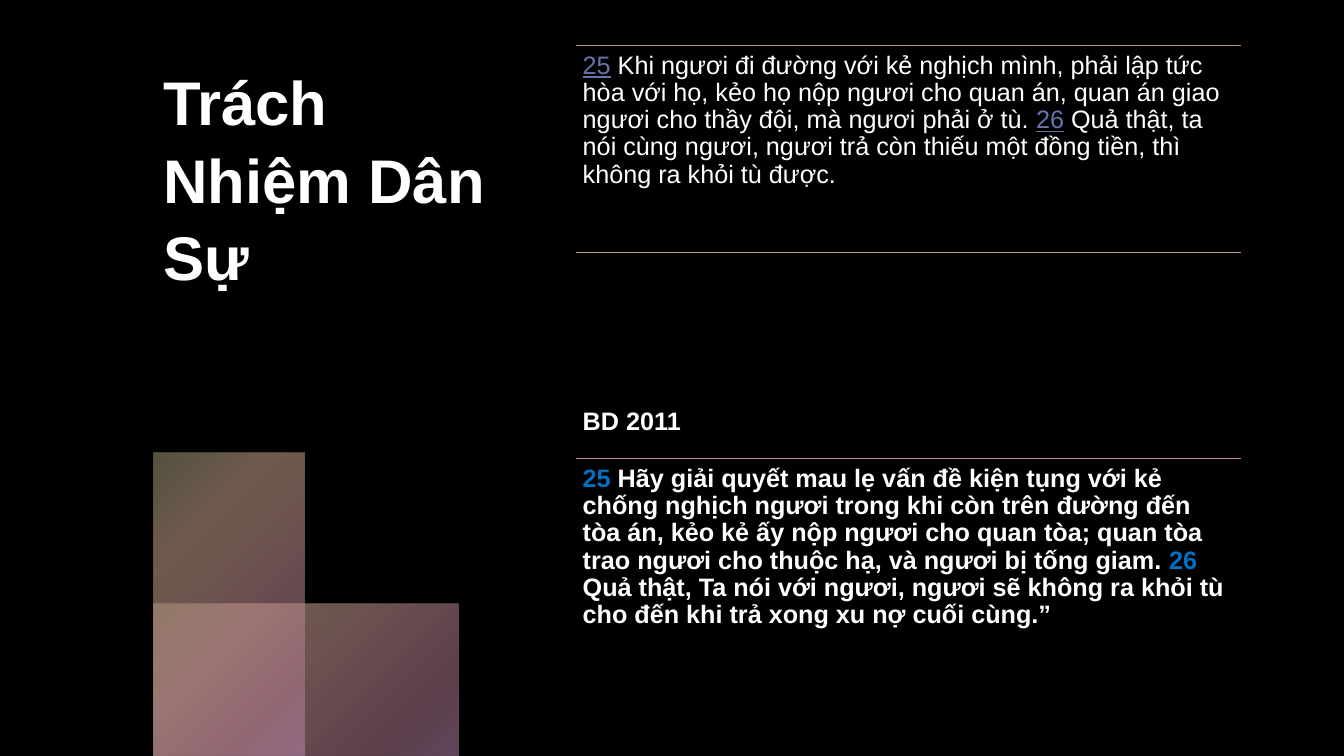
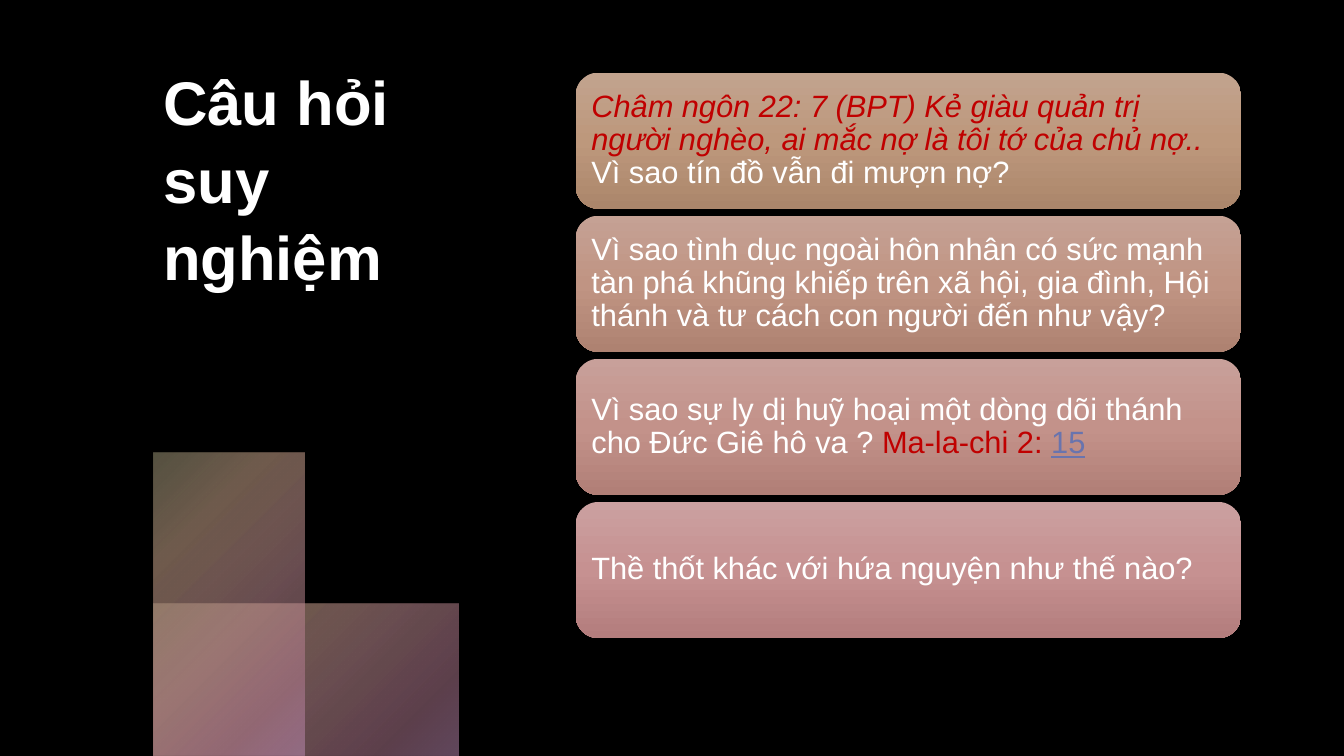
from lxml import etree
from pptx import Presentation
from pptx.dml.color import RGBColor
from pptx.enum.shapes import MSO_CONNECTOR as LineKind, MSO_SHAPE as Preset
from pptx.enum.text import MSO_ANCHOR as Anchor
from pptx.oxml import parse_xml
from pptx.oxml.ns import nsdecls, qn
from pptx.util import Inches, Pt

THEME = {
    "font": "Arial",
    "background": "000000", "text": "FFFFFF",
    "link": "6974AE", "verse": "0070C0", "quote": "C00000",
    "title_size": 44, "verse_size": 18, "question_size": 22,
    "rules": ["BA987F", "BF9489", "C49393"],
    # position %, colour, opacity %
    "block": [(0, "A8A17F", 50), (25, "BA987F", 60), (50, "C49393", 55),
              (81, "BA7F97", 50), (99, "C390BA", 50)],
    "cards": [("C2A38E", "BD987C", "AB866B"), ("C5A194", "C09483", "AE8271"),
              ("C8A09A", "C3928A", "B17F77"), ("CBA0A0", "C69191", "B37D7D")],
}
RADIAL = '<a:path path="circle"><a:fillToRect r="100000" b="100000"/></a:path>'
DOWNWARD = '<a:lin ang="5400000" scaled="0"/>'


def write_text(shape, runs, size, bold=False, anchor=Anchor.TOP, spacing=0.9,
               inset=0.07, bottom=None):
    """Fill a shape with one paragraph; each run is (text, format)."""
    frame = shape.text_frame
    frame.word_wrap = True
    frame.vertical_anchor = anchor
    frame.margin_left = frame.margin_right = frame.margin_top = Inches(inset)
    frame.margin_bottom = Inches(inset if bottom is None else bottom)
    paragraph = frame.paragraphs[0]
    paragraph.line_spacing = spacing
    paragraph.alignment = 1
    for text, look in runs:
        run = paragraph.add_run()
        run.text = text
        font = run.font
        font.name, font.size, font.bold = THEME["font"], Pt(size), bold
        font.italic = look.get("italic", False)
        font.underline = look.get("underline", False)
        font.color.rgb = RGBColor.from_string(look.get("color", THEME["text"]))


def add_gradient_shape(slide, preset, box, stops, direction):
    """Add a borderless shape with a gradient of (position, colour, opacity)."""
    shape = slide.shapes.add_shape(preset, *map(Inches, box))
    shape.shadow.inherit = False
    shape.line.fill.background()
    stop_xml = "".join(
        f'<a:gs pos="{pos * 1000}"><a:srgbClr val="{color}">'
        f'<a:alpha val="{opacity * 1000}"/></a:srgbClr></a:gs>'
        for pos, color, opacity in stops)
    shape.fill.background()
    no_fill = shape._element.spPr.find(qn("a:noFill"))
    no_fill.getparent().replace(no_fill, parse_xml(
        f'<a:gradFill {nsdecls("a")} rotWithShape="1"><a:gsLst>{stop_xml}</a:gsLst>'
        f'{direction}</a:gradFill>'))
    return shape


PLAIN = {}
LINK = {"color": THEME["link"], "underline": True}
VERSE = {"color": THEME["verse"]}
QUOTE = {"color": THEME["quote"]}
LEFT, WIDTH = 5.71, 6.6

prs = Presentation()
prs.slide_width, prs.slide_height = Inches(13.33), Inches(7.5)

# Shared ground, corner blocks and title
slides = []
for title in ("Trách Nhiệm Dân Sự", "Câu hỏi suy nghiệm"):
    slide = prs.slides.add_slide(prs.slide_layouts[6])
    slide.background.fill.solid()
    slide.background.fill.fore_color.rgb = RGBColor.from_string(THEME["background"])
    for box in ((1.52, 5.99, 3.03, 1.51), (1.52, 4.49, 1.5, 3.01)):
        add_gradient_shape(slide, Preset.RECTANGLE, box, THEME["block"], RADIAL)
    heading = slide.shapes.add_textbox(*map(Inches, (1.52, 0.5, 3.48, 3.71)))
    write_text(heading, [(title, PLAIN)], THEME["title_size"], bold=True,
               spacing=1.05, inset=0.1, bottom=0.05)
    slides.append(slide)
duty_slide, question_slide = slides

# Slide 1: two translations between thin rules
passages = [
    ([("25", LINK),
      (" Khi ngươi đi đường với kẻ nghịch mình, phải lập tức hòa với họ, kẻo họ nộp "
       "ngươi cho quan án, quan án giao ngươi cho thầy đội, mà ngươi phải ở tù. ", PLAIN),
      ("26", LINK),
      (" Quả thật, ta nói cùng ngươi, ngươi trả còn thiếu một đồng tiền, thì không ra "
       "khỏi tù được.", PLAIN)], {}),
    ([("BD 2011", PLAIN)], {"bold": True, "anchor": Anchor.BOTTOM, "bottom": 0.24}),
    ([("25", VERSE),
      (" Hãy giải quyết mau lẹ vấn đề kiện tụng với kẻ chống nghịch ngươi trong khi còn "
       "trên đường đến tòa án, kẻo kẻ ấy nộp ngươi cho quan tòa; quan tòa trao ngươi cho "
       "thuộc hạ, và ngươi bị tống giam. ", PLAIN),
      ("26", VERSE),
      (" Quả thật, Ta nói với ngươi, ngươi sẽ không ra khỏi tù cho đến khi trả xong xu nợ "
       "cuối cùng.”", PLAIN)], {"bold": True}),
]
ROW_TOP, ROW_HEIGHT = 0.45, 2.05
for row, ((runs, look), color) in enumerate(zip(passages, THEME["rules"])):
    top = ROW_TOP + row * ROW_HEIGHT
    rule = duty_slide.shapes.add_connector(
        LineKind.STRAIGHT, *map(Inches, (LEFT, top, LEFT + WIDTH, top)))
    rule.line.color.rgb = RGBColor.from_string(color)
    rule.line.width = Pt(0.5)
    etree.SubElement(rule._element.spPr, qn("a:effectLst"))
    passage = duty_slide.shapes.add_textbox(
        *map(Inches, (LEFT, top, WIDTH, ROW_HEIGHT)))
    write_text(passage, runs, THEME["verse_size"], **look)

# Slide 2: question cards
questions = [
    [("Châm ngôn 22: 7 (BPT) Kẻ giàu quản trị người nghèo, ai mắc nợ là tôi tớ của chủ nợ..",
      {**QUOTE, "italic": True}),
     (" Vì sao tín đồ vẫn đi mượn nợ?", PLAIN)],
    [("Vì sao tình dục ngoài hôn nhân có sức mạnh tàn phá khũng khiếp trên xã hội, gia đình, "
      "Hội thánh và tư cách con người đến như vậy?", PLAIN)],
    [("Vì sao sự ly dị huỹ hoại một dòng dõi thánh cho Đức Giê hô va ? ", PLAIN),
     ("Ma-la-chi 2: ", QUOTE), ("15", LINK)],
    [("Thề thốt khác với hứa nguyện như thế nào?", PLAIN)],
]
CARD_TOP, CARD_HEIGHT, CARD_GAP = 0.72, 1.35, 0.07
for row, (runs, colors) in enumerate(zip(questions, THEME["cards"])):
    top = CARD_TOP + row * (CARD_HEIGHT + CARD_GAP)
    stops = [(pos, color, 100) for pos, color in zip((0, 50, 100), colors)]
    card = add_gradient_shape(question_slide, Preset.ROUNDED_RECTANGLE,
                              (LEFT, top, WIDTH, CARD_HEIGHT), stops, DOWNWARD)
    write_text(card, runs, THEME["question_size"], anchor=Anchor.MIDDLE, inset=0.09)

prs.save("out.pptx")
